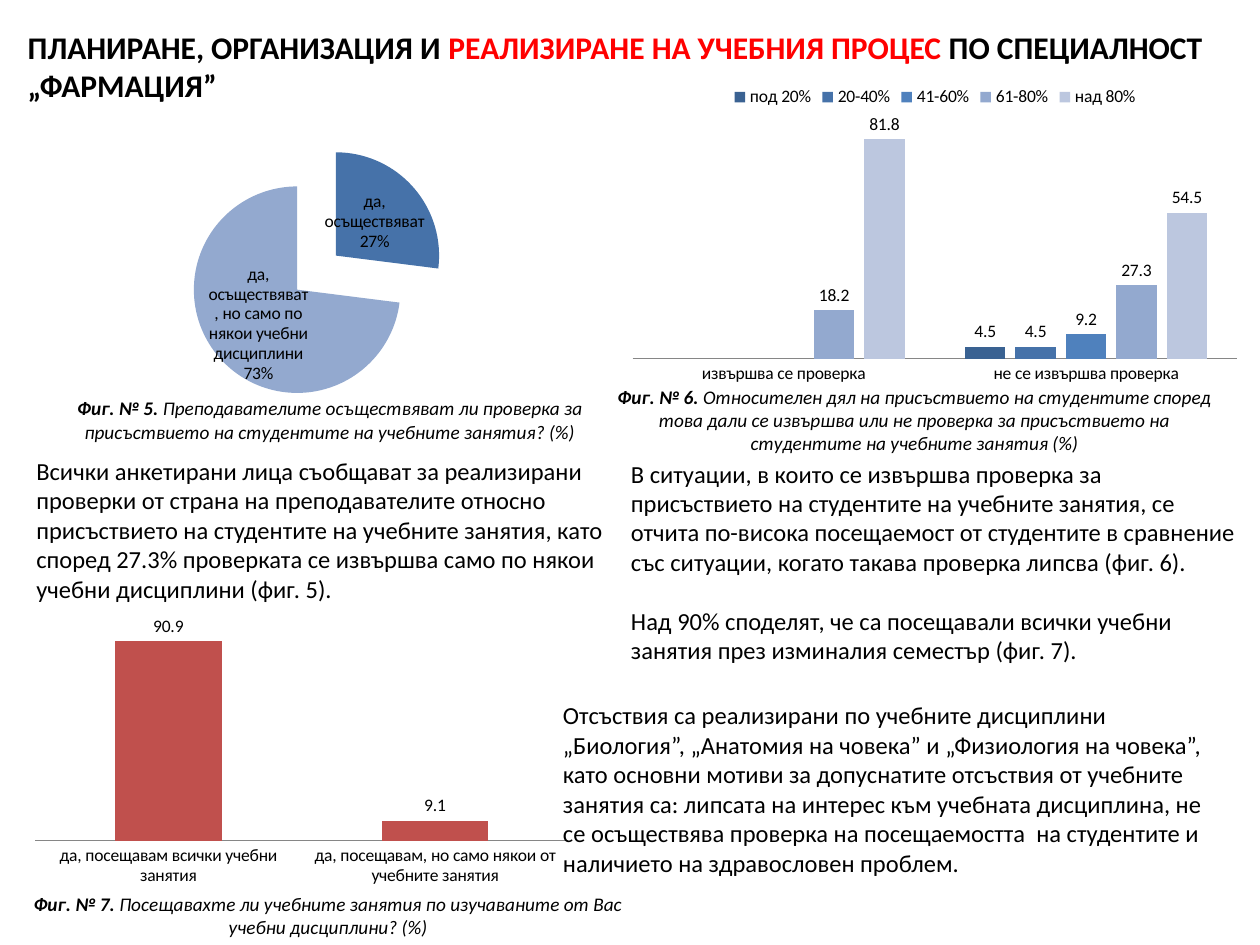
"""Build the slide on attendance checks in the pharmacy programme."""
from lxml import etree
from pptx import Presentation
from pptx import util as u
from pptx.chart.data import CategoryChartData
from pptx.dml.color import RGBColor
from pptx.enum import chart as charts, text
from pptx.oxml import ns

FONT = "Calibri"
BLACK = RGBColor(0x00, 0x00, 0x00)
RED = RGBColor(0xFF, 0x00, 0x00)
AXIS_GREY = RGBColor(0x86, 0x86, 0x86)
BRICK = RGBColor(0xC0, 0x50, 0x4D)
BLUES = [
    RGBColor(0x3A, 0x62, 0x92),
    RGBColor(0x46, 0x72, 0xA9),
    RGBColor(0x4F, 0x81, 0xBD),
    RGBColor(0x93, 0xA9, 0xCF),
    RGBColor(0xBC, 0xC7, 0xDF),
]


def inches(box):
    """Turn left, top, width and height into lengths."""
    return [u.Inches(value) for value in box]


def add_run(paragraph, words, size, color=BLACK, bold=False, italic=False):
    """Append one formatted run."""
    run = paragraph.add_run()
    run.text = words
    font = run.font
    font.name, font.size = FONT, u.Pt(size)
    font.bold, font.italic = bold, italic
    font.color.rgb = color


def add_title(slide, box, parts):
    """Place the title and fill it with coloured parts."""
    title = slide.shapes.title
    title.left, title.top, title.width, title.height = inches(box)
    frame = title.text_frame
    frame.auto_size = text.MSO_AUTO_SIZE.NONE
    frame.vertical_anchor = text.MSO_ANCHOR.MIDDLE
    paragraph = frame.paragraphs[0]
    paragraph.alignment = text.PP_ALIGN.LEFT
    for words, color in parts:
        add_run(paragraph, words, 18, color, bold=True)


def add_text_frame(slide, box):
    """Add a wrapping text box and return its frame."""
    frame = slide.shapes.add_textbox(*inches(box)).text_frame
    frame.word_wrap = True
    frame.auto_size = text.MSO_AUTO_SIZE.SHAPE_TO_FIT_TEXT
    return frame


def add_caption(slide, box, number, words):
    """Add a centred figure caption."""
    paragraph = add_text_frame(slide, box).paragraphs[0]
    paragraph.alignment = text.PP_ALIGN.CENTER
    add_run(paragraph, f"Фиг. № {number}. ", 11, bold=True, italic=True)
    add_run(paragraph, words, 11, italic=True)


def add_body(slide, box, *passages):
    """Add body paragraphs set one line apart."""
    frame = add_text_frame(slide, box)
    for index, words in enumerate(passages):
        paragraph = frame.add_paragraph() if index else frame.paragraphs[0]
        if index:
            paragraph.space_before = u.Pt(17)
        add_run(paragraph, words, 14)


def set_plot_layout(chart, layout):
    """Fix the inner plot area as fractions of the chart."""
    plot_area = chart._chartSpace.find(".//" + ns.qn("c:plotArea"))
    for old in plot_area.findall(ns.qn("c:layout")):
        plot_area.remove(old)
    element = etree.Element(ns.qn("c:layout"))
    manual = etree.SubElement(element, ns.qn("c:manualLayout"))
    settings = [("layoutTarget", "inner"), ("xMode", "edge"), ("yMode", "edge")]
    settings += zip("xywh", layout)
    for tag, value in settings:
        etree.SubElement(manual, ns.qn(f"c:{tag}")).set("val", str(value))
    plot_area.insert(0, element)


def add_chart(slide, kind, box, layout, categories, series):
    """Add a chart with labels and the common font."""
    data = CategoryChartData()
    data.categories = categories
    for name, values in series:
        data.add_series(name, values)
    chart = slide.shapes.add_chart(kind, *inches(box), data).chart
    chart.has_title = chart.has_legend = False
    chart.font.name, chart.font.size = FONT, u.Pt(10)
    chart.font.color.rgb = BLACK
    chart.plots[0].has_data_labels = True
    chart.plots[0].data_labels.show_value = True
    set_plot_layout(chart, layout)
    return chart


def fill(item, color):
    """Give a series or point a solid fill."""
    item.format.fill.solid()
    item.format.fill.fore_color.rgb = color


def add_pie(slide, box, layout, categories, values, colors):
    """Add an exploded pie labelled with category and percentage."""
    kind = charts.XL_CHART_TYPE.PIE_EXPLODED
    chart = add_chart(slide, kind, box, layout, categories, [("Series 1", values)])
    plot = chart.plots[0]
    labels = plot.data_labels
    labels.show_value = False
    labels.show_category_name = labels.show_percentage = True
    labels.number_format, labels.number_format_is_linked = "0%", False
    labels.position = charts.XL_LABEL_POSITION.CENTER
    separator = etree.Element(ns.qn("c:separator"))
    separator.text = "\n"
    labels._element.find(ns.qn("c:showBubbleSize")).addnext(separator)
    for index, color in enumerate(colors):
        fill(plot.series[0].points[index], color)


def add_columns(slide, box, layout, categories, series, colors, maximum):
    """Add clustered columns with a hidden value axis."""
    kind = charts.XL_CHART_TYPE.COLUMN_CLUSTERED
    chart = add_chart(slide, kind, box, layout, categories, series)
    plot = chart.plots[0]
    plot.vary_by_categories = False
    plot.gap_width = 150
    plot.data_labels.position = charts.XL_LABEL_POSITION.OUTSIDE_END
    for item, color in zip(plot.series, colors):
        fill(item, color)
    values = chart.value_axis
    values.visible = values.has_major_gridlines = False
    values.minimum_scale, values.maximum_scale = 0, maximum
    chart.category_axis.major_tick_mark = charts.XL_TICK_MARK.NONE
    chart.category_axis.format.line.color.rgb = AXIS_GREY
    return chart


def add_top_legend(chart):
    """Show the legend above the plot."""
    chart.has_legend = True
    chart.legend.position = charts.XL_LEGEND_POSITION.TOP
    chart.legend.include_in_layout = False


def main():
    """Assemble and save the slide."""
    presentation = Presentation()
    presentation.slide_width, presentation.slide_height = u.Inches(10), u.Inches(7.5)
    slide = presentation.slides.add_slide(presentation.slide_layouts[5])
    add_title(slide, (0.12, 0.13, 9.69, 0.79), [
        ("ПЛАНИРАНЕ, ОРГАНИЗАЦИЯ И ", BLACK),
        ("РЕАЛИЗИРАНЕ НА УЧЕБНИЯ ПРОЦЕС", RED),
        (" ПО СПЕЦИАЛНОСТ „ФАРМАЦИЯ”", BLACK),
    ])
    add_pie(slide, (0.2, 0.92, 4.49, 2.44), (0.06, 0.09, 0.91, 0.84),
            ["да, осъществяват", "да, осъществяват, но само по някои учебни дисциплини"],
            (27, 73), (BLUES[1], BLUES[3]))
    add_caption(slide, (0.12, 3.1, 5, 0.47), 5,
                "Преподавателите осъществяват ли проверка за присъствието на "
                "студентите на учебните занятия? (%)")
    add_body(slide, (0.19, 3.57, 5, 1.28),
             "Всички анкетирани лица съобщават за реализирани проверки от страна на "
             "преподавателите относно присъствието на студентите на учебните занятия, "
             "като според 27.3% проверката се извършва само по някои учебни "
             "дисциплини (фиг. 5).")
    attendance = add_columns(
        slide, (4.92, 0.58, 5, 2.52), (0.02, 0.14, 0.96, 0.76),
        ["извършва се проверка", "не се извършва проверка"],
        [("под 20%", (None, 4.5)), ("20-40%", (None, 4.5)), ("41-60%", (None, 9.2)),
         ("61-80%", (18.2, 27.3)), ("над 80%", (81.8, 54.5))], BLUES, 90)
    attendance.plots[0].overlap = -25
    add_top_legend(attendance)
    add_caption(slide, (4.76, 3.01, 5, 0.66), 6,
                "Относителен дял на присъствието на студентите според това дали се "
                "извършва или не проверка за присъствието на студентите на учебните "
                "занятия (%)")
    add_body(slide, (4.91, 3.59, 5, 1.75),
             "В ситуации, в които се извършва проверка за присъствието на студентите "
             "на учебните занятия, се отчита по-висока посещаемост от студентите в "
             "сравнение със ситуации, когато такава проверка липсва (фиг. 6).",
             "Над 90% споделят, че са посещавали всички учебни занятия през изминалия "
             "семестър (фиг. 7).")
    add_columns(slide, (0.19, 4.75, 4.41, 2.29), (0.02, 0.08, 0.96, 0.76),
                ["да, посещавам всички учебни занятия",
                 "да, посещавам, но само някои от учебните занятия"],
                [("Series 1", (90.9, 9.1))], [BRICK], 100)
    add_caption(slide, (0.02, 7.03, 5.17, 0.47), 7,
                "Посещавахте ли учебните занятия по изучаваните от Вас учебни "
                "дисциплини? (%)")
    add_body(slide, (4.37, 5.51, 5.47, 1.51),
             "Отсъствия са реализирани по учебните дисциплини „Биология”, „Анатомия "
             "на човека” и „Физиология на човека”, като основни мотиви за допуснатите "
             "отсъствия от учебните занятия са: липсата на интерес към учебната "
             "дисциплина, не се осъществява проверка на посещаемостта  на студентите "
             "и наличието на здравословен проблем.")
    presentation.save("out.pptx")


if __name__ == "__main__":
    main()
